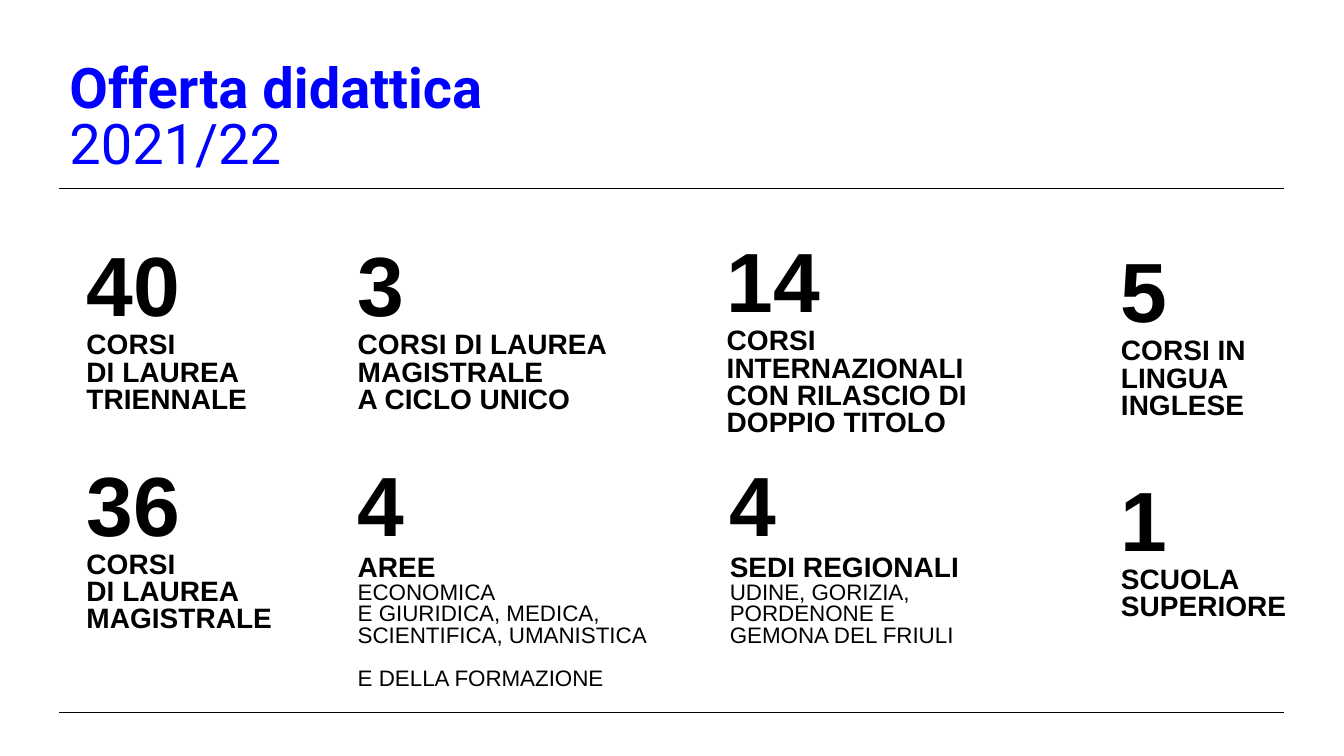
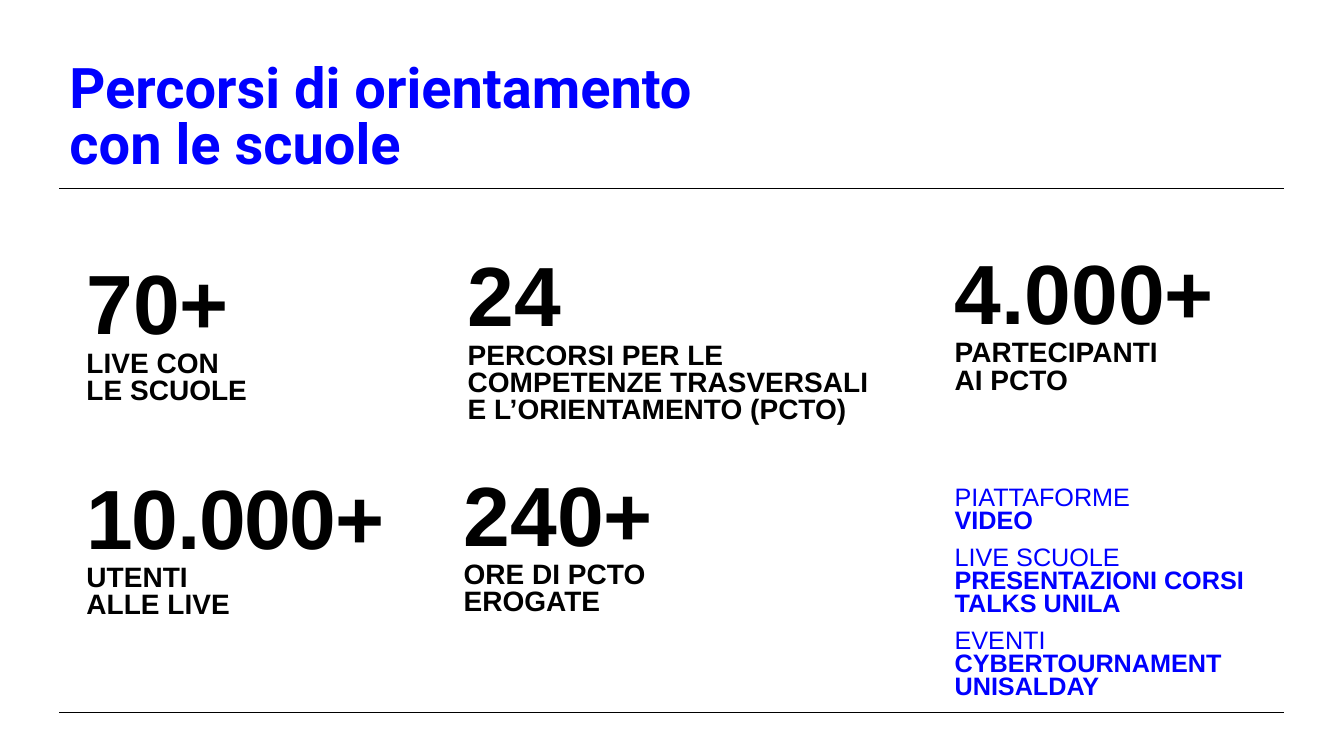
from dataclasses import dataclass

from lxml import etree
from pptx import Presentation
from pptx.dml.color import RGBColor
from pptx.enum.shapes import MSO_CONNECTOR
from pptx.enum.text import MSO_ANCHOR, MSO_AUTO_SIZE, PP_ALIGN
from pptx.oxml.ns import qn
from pptx.slide import Slide
from pptx.util import Emu, Pt

STRAIGHT = MSO_CONNECTOR.STRAIGHT
TOP = MSO_ANCHOR.TOP
GROW = MSO_AUTO_SIZE.SHAPE_TO_FIT_TEXT
LEFT = PP_ALIGN.LEFT

PX = 9144  # 100 px to the inch
SLIDE_WIDTH, SLIDE_HEIGHT = 1333, 750
RULE_LEFT, RULE_RIGHT = 59, 1274
RULE_TOPS = (187, 707)


@dataclass(frozen=True)
class TextStyle:
    size: int
    bold: bool
    color: RGBColor
    font: str = "Arial"
    tracking: int = 0  # hundredths of a point


@dataclass(frozen=True)
class Theme:
    black: RGBColor = RGBColor(0, 0, 0)
    blue: RGBColor = RGBColor(0, 0, 255)
    title_size: int = 40
    value_size: int = 60
    caption_size: int = 20
    detail_size: int = 16
    list_size: int = 18
    title_leading: float = 40.2
    value_leading: float = 47.4
    caption_leading: float = 19.4
    detail_leading: float = 15.4
    list_leading: float = 16.4
    rule_width: float = 0.5


THEME = Theme()
TITLE_BOLD = TextStyle(THEME.title_size, True, THEME.blue, "Roboto")
TITLE_LIGHT = TextStyle(THEME.title_size, False, THEME.blue, "Roboto")
VALUE = TextStyle(THEME.value_size, True, THEME.black)
VALUE_TIGHT = TextStyle(THEME.value_size, True, THEME.black, tracking=-100)
CAPTION = TextStyle(THEME.caption_size, True, THEME.black)
DETAIL = TextStyle(THEME.detail_size, False, THEME.black)
LIST_HEAD = TextStyle(THEME.list_size, False, THEME.blue)
LIST_ITEM = TextStyle(THEME.list_size, True, THEME.blue)


@dataclass(frozen=True)
class Box:
    left: int
    top: int
    width: int
    height: int


@dataclass(frozen=True)
class Block:
    """A paragraph: the first line has the head style, the others the body style."""
    text: str
    leading: float
    head: TextStyle
    body: TextStyle
    before: int = 0
    after: int = 0


@dataclass(frozen=True)
class Stat:
    box: Box
    value: str
    caption: str
    detail: str = ""
    value_style: TextStyle = VALUE


@dataclass(frozen=True)
class Page:
    title: str
    second_line: TextStyle
    stats: tuple[Stat, ...]


TITLE_BOX = Box(RULE_LEFT, 58, RULE_RIGHT - RULE_LEFT, 124)
PROGRAMS_BOX = Box(937, 480, 400, 327)

COURSES = Page("Offerta didattica \n2021/22", TITLE_LIGHT, (
    Stat(Box(76, 260, 277, 183), "40", "CORSI \nDI LAUREA\nTRIENNALE"),
    Stat(Box(345, 260, 277, 156), "3", "CORSI DI LAUREA MAGISTRALE \nA CICLO UNICO"),
    Stat(Box(711, 256, 277, 183), "14",
         "CORSI INTERNAZIONALI CON RILASCIO DI DOPPIO TITOLO"),
    Stat(Box(1102, 266, 277, 156), "5", "CORSI IN \nLINGUA \nINGLESE"),
    Stat(Box(76, 478, 277, 209), "36", "CORSI \nDI LAUREA\nMAGISTRALE"),
    Stat(Box(345, 478, 310, 190), "4", "AREE",
         "ECONOMICA \nE GIURIDICA, MEDICA, SCIENTIFICA, UMANISTICA \nE DELLA FORMAZIONE"),
    Stat(Box(714, 478, 310, 169), "4", "SEDI REGIONALI",
         "UDINE, GORIZIA, PORDENONE E \nGEMONA DEL FRIULI"),
    Stat(Box(1102, 493, 277, 129), "1", "SCUOLA\nSUPERIORE"),
))

ORIENTATION = Page("Percorsi di orientamento \ncon le scuole", TITLE_BOLD, (
    Stat(Box(76, 278, 343, 129), "70+", "LIVE CON \nLE SCUOLE"),
    Stat(Box(454, 270, 460, 209), "24",
         "PERCORSI PER LE COMPETENZE TRASVERSALI \nE L’ORIENTAMENTO (PCTO)"),
    Stat(Box(937, 268, 460, 183), "4.000+", "PARTECIPANTI \nAI PCTO"),
    Stat(Box(76, 491, 343, 129), "10.000+", "UTENTI \nALLE LIVE",
         value_style=VALUE_TIGHT),
    Stat(Box(450, 488, 277, 183), "240+", "ORE DI PCTO EROGATE"),
))

PROGRAMS = (
    "PIATTAFORME \nVIDEO",
    "LIVE SCUOLE\nPRESENTAZIONI CORSI\nTALKS UNILA",
    "EVENTI \nCYBERTOURNAMENT\nUNISALDAY",
)


def px(length: int) -> Emu:
    return Emu(length * PX)


def add_text(slide: Slide, box: Box, blocks: list[Block]) -> None:
    shape = slide.shapes.add_textbox(px(box.left), px(box.top), px(box.width), px(box.height))
    text_frame = shape.text_frame
    text_frame.word_wrap = True
    text_frame.auto_size = GROW
    text_frame.vertical_anchor = TOP
    for index, block in enumerate(blocks):
        paragraph = text_frame.add_paragraph() if index else text_frame.paragraphs[0]
        paragraph.text = block.text
        paragraph.alignment = LEFT
        paragraph.line_spacing = Pt(block.leading)
        paragraph.space_before = Pt(block.before)
        paragraph.space_after = Pt(block.after)
        for position, run in enumerate(paragraph.runs):
            style = block.body if position else block.head
            run.font.name = style.font
            run.font.size = Pt(style.size)
            run.font.bold = style.bold
            run.font.color.rgb = style.color
            if style.tracking:
                run._r.get_or_add_rPr().set("spc", str(style.tracking))


def add_rule(slide: Slide, top: int) -> None:
    rule = slide.shapes.add_connector(
        STRAIGHT, px(RULE_LEFT), px(top), px(RULE_RIGHT), px(top))
    rule.line.color.rgb = THEME.black
    rule.line.width = Pt(THEME.rule_width)
    etree.SubElement(rule._element.spPr, qn("a:effectLst"))


def add_stat(slide: Slide, stat: Stat) -> None:
    value = Block(stat.value, THEME.value_leading, stat.value_style, stat.value_style)
    if stat.detail:
        caption = Block(f"{stat.caption}\n{stat.detail}", THEME.detail_leading,
                        CAPTION, DETAIL, before=6)
    else:
        caption = Block(stat.caption, THEME.caption_leading, CAPTION, CAPTION)
    add_text(slide, stat.box, [value, caption])


def add_page(presentation: Presentation, page: Page) -> Slide:
    slide = presentation.slides.add_slide(presentation.slide_layouts[6])
    # Frame and title
    for top in RULE_TOPS:
        add_rule(slide, top)
    add_text(slide, TITLE_BOX,
             [Block(page.title, THEME.title_leading, TITLE_BOLD, page.second_line)])
    # Key figures
    for stat in page.stats:
        add_stat(slide, stat)
    return slide


def main() -> None:
    presentation = Presentation()
    presentation.slide_width = px(SLIDE_WIDTH)
    presentation.slide_height = px(SLIDE_HEIGHT)
    add_page(presentation, COURSES)
    orientation = add_page(presentation, ORIENTATION)
    # List of programs
    add_text(orientation, PROGRAMS_BOX, [
        Block(text, THEME.list_leading, LIST_HEAD, LIST_ITEM, after=10) for text in PROGRAMS])
    presentation.save("out.pptx")


if __name__ == "__main__":
    main()
